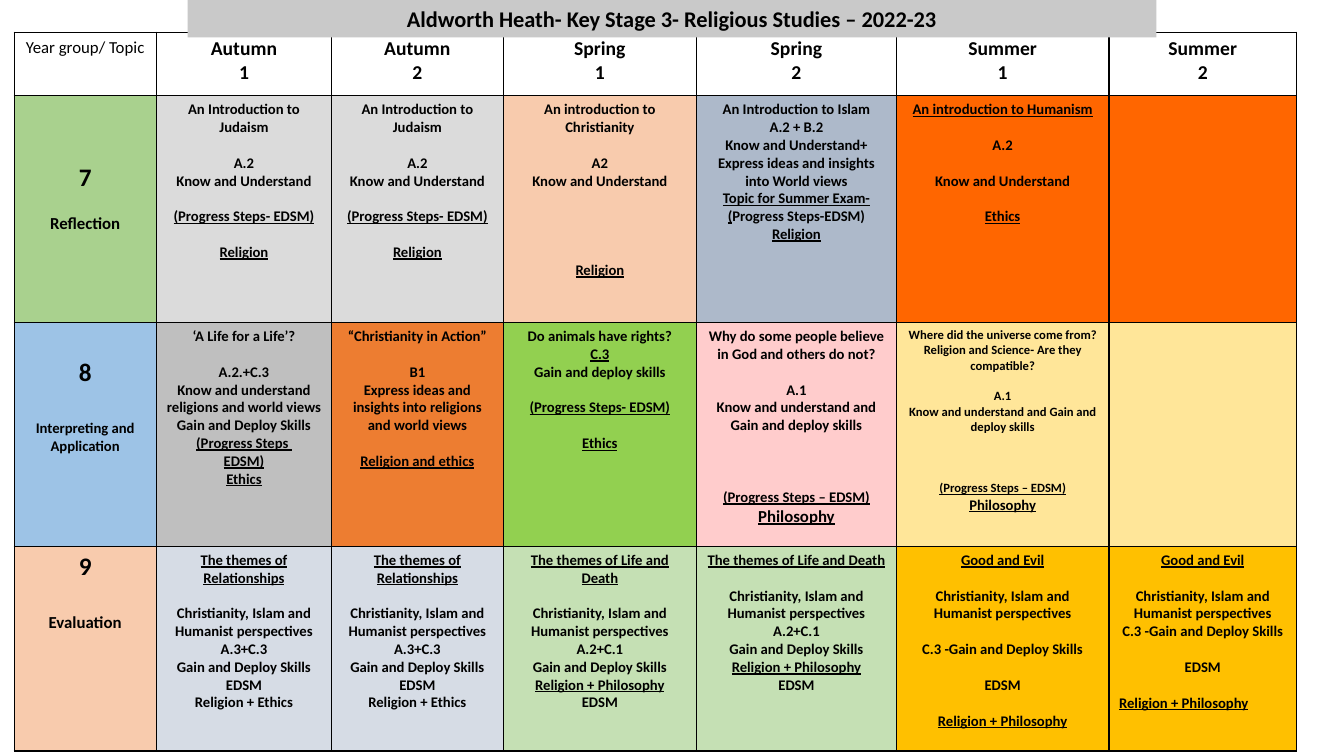
"""Build a one-slide Key Stage 3 Religious Studies curriculum map."""
from lxml.etree import SubElement
from pptx import Presentation
from pptx.dml.color import RGBColor
from pptx.enum.text import MSO_ANCHOR, MSO_AUTO_SIZE, PP_ALIGN
from pptx.oxml.ns import qn
from pptx.util import Inches, Pt

LINE_HEIGHT = 1.22
BODY_SIZE = 10.5


def color(hex_string):
    return RGBColor.from_string(hex_string)


def write(frame, text, size=BODY_SIZE, last_size=None, gap=None, bold=True, last_align=PP_ALIGN.CENTER):
    """Lines split at ';', an empty line is a gap, runs split at '|', '_' underlines."""
    lines = text.split(";")
    paragraph, skipped = frame.paragraphs[0], 0
    for index, line in enumerate(lines):
        if not line:
            skipped += 1
            continue
        if index:
            paragraph = frame.add_paragraph()
        is_last = index == len(lines) - 1
        paragraph.alignment = last_align if is_last else PP_ALIGN.CENTER
        paragraph.space_before = Pt(round(skipped * (gap or size) * LINE_HEIGHT, 1))
        skipped = 0
        for piece in line.split("|"):
            run = paragraph.add_run()
            run.text = piece.removeprefix("_")
            run.font.name = "Calibri"
            run.font.size = Pt(last_size if last_size and is_last else size)
            run.font.bold = bold
            run.font.underline = piece.startswith("_")
            run.font.color.rgb = color("000000")


judaism = "An Introduction to Judaism;;A.2;Know and Understand;;_(Progress Steps- EDSM);;_Religion"
perspectives = "Christianity, Islam and Humanist perspectives"
relationships = (f"_The themes of Relationships;;{perspectives};A.3+C.3;"
                 "Gain and Deploy Skills;EDSM;Religion + Ethics")
life_and_death = (f"_The themes of Life and Death;;{perspectives};A.2+C.1;"
                  "Gain and Deploy Skills;_Religion + Philosophy;EDSM")

headings = ["Year group/ Topic"] + [
    f"{term};{half}" for term in ("Autumn", "Spring", "Summer") for half in (1, 2)]
header_row = [("FFFFFF", heading, {"size": 14}) for heading in headings]
header_row[0] = ("FFFFFF", headings[0], {"size": 12, "bold": False})

year_7 = [
    ("A9D18E", "7;;Reflection", {"size": 18, "last_size": 12, "gap": 12}),
    ("DBDBDB", judaism, {}),
    ("DBDBDB", judaism, {}),
    ("F8CBAD", "An introduction to Christianity;;A2;Know and Understand;;;;;_Religion", {}),
    ("ADB9CA", "An Introduction to Islam;A.2 + B.2;"
               "Know and Understand+ Express ideas and insights into World views;"
               "_Topic for Summer Exam-(|Progress Steps-EDSM);_Religion", {}),
    ("FF6600", "_An introduction to Humanism;;A.2;;Know and Understand;;_Ethics", {}),
    ("FF6600", "", {}),
]
year_8 = [
    ("9DC3E6", "8;;Interpreting and Application", {"size": 18, "last_size": BODY_SIZE}),
    ("BFBFBF", "‘A Life for a Life’?;;A.2.+C.3;Know and understand religions and world views;"
               "Gain and Deploy Skills;_(Progress Steps ;_EDSM);_Ethics", {}),
    ("ED7D31", "“Christianity in Action”;;B1;"
               "Express ideas and insights into religions and world views;;_Religion and ethics", {}),
    ("92D050", "Do animals have rights?;_C.3;Gain and deploy skills;;"
               "_(Progress Steps- EDSM);;_Ethics", {}),
    ("FFCCCC", "Why do some people believe in God and others do not?;;A.1;"
               "Know and understand and Gain and deploy skills;;;;"
               "_(Progress Steps – EDSM);_Philosophy", {"last_size": 12}),
    ("FFE699", "Where did the universe come from?;Religion and Science- Are they compatible?;;A.1;"
               "Know and understand and Gain and deploy skills;;;;"
               "_(Progress Steps – EDSM);_Philosophy", {"size": 9, "last_size": BODY_SIZE}),
    ("FFE699", "", {}),
]
year_9 = [
    ("F8CBAD", "9;;Evaluation", {"size": 18, "last_size": 12}),
    ("D6DCE5", relationships, {}),
    ("D6DCE5", relationships, {}),
    ("C5E0B4", life_and_death, {}),
    ("C5E0B4", life_and_death, {}),
    ("FFC000", f"_Good and Evil;;{perspectives};;C.3 -Gain and Deploy Skills;;EDSM;;"
               "_Religion + Philosophy", {}),
    ("FFC000", f"_Good and Evil;;{perspectives};C.3 -Gain and Deploy Skills;;EDSM;;"
               "_Religion + Philosophy", {"last_align": PP_ALIGN.LEFT}),
]
curriculum = [header_row, year_7, year_8, year_9]
column_widths = [1.41, 1.74, 1.7, 1.92, 1.98, 2.11, 1.86]
row_heights = [0.63, 2.25, 2.22, 2.03]
label_top_margins = [0.05, 0.66, 0.35, 0.05]

presentation = Presentation()
presentation.slide_width, presentation.slide_height = Inches(13.33), Inches(7.5)
slide = presentation.slides.add_slide(presentation.slide_layouts[5])

table_frame = slide.shapes.add_table(
    len(row_heights), len(column_widths), Inches(0.14), Inches(0.32),
    Inches(sum(column_widths)), Inches(sum(row_heights)))
table = table_frame.table
table.first_row = table.horz_banding = False
for column, width in zip(table.columns, column_widths):
    column.width = Inches(width)
for row, height in zip(table.rows, row_heights):
    row.height = Inches(height)

for row_index, row_content in enumerate(curriculum):
    for column_index, (fill, text, text_format) in enumerate(row_content):
        cell = table.cell(row_index, column_index)
        cell.margin_top = Inches(0.05 if column_index else label_top_margins[row_index])
        properties = cell._tc.get_or_add_tcPr()
        for side in ("a:lnL", "a:lnR", "a:lnT", "a:lnB"):
            border = SubElement(properties, qn(side), w=str(Pt(1)))
            border_fill = SubElement(border, qn("a:solidFill"))
            SubElement(border_fill, qn("a:srgbClr"), val="000000")
        cell.fill.solid()
        cell.fill.fore_color.rgb = color(fill)
        write(cell.text_frame, text, **text_format)

title = slide.shapes.title
title.left, title.top, title.width, title.height = Inches(1.86), 0, Inches(9.61), Inches(0.37)
title.fill.solid()
title.fill.fore_color.rgb = color("C9C9C9")
title.text_frame.auto_size = MSO_AUTO_SIZE.NONE
title.text_frame.vertical_anchor = MSO_ANCHOR.MIDDLE
write(title.text_frame, "Aldworth Heath- Key Stage 3- Religious Studies – 2022-23", size=16)
table_frame._element.addnext(title._element)

presentation.save("out.pptx")
